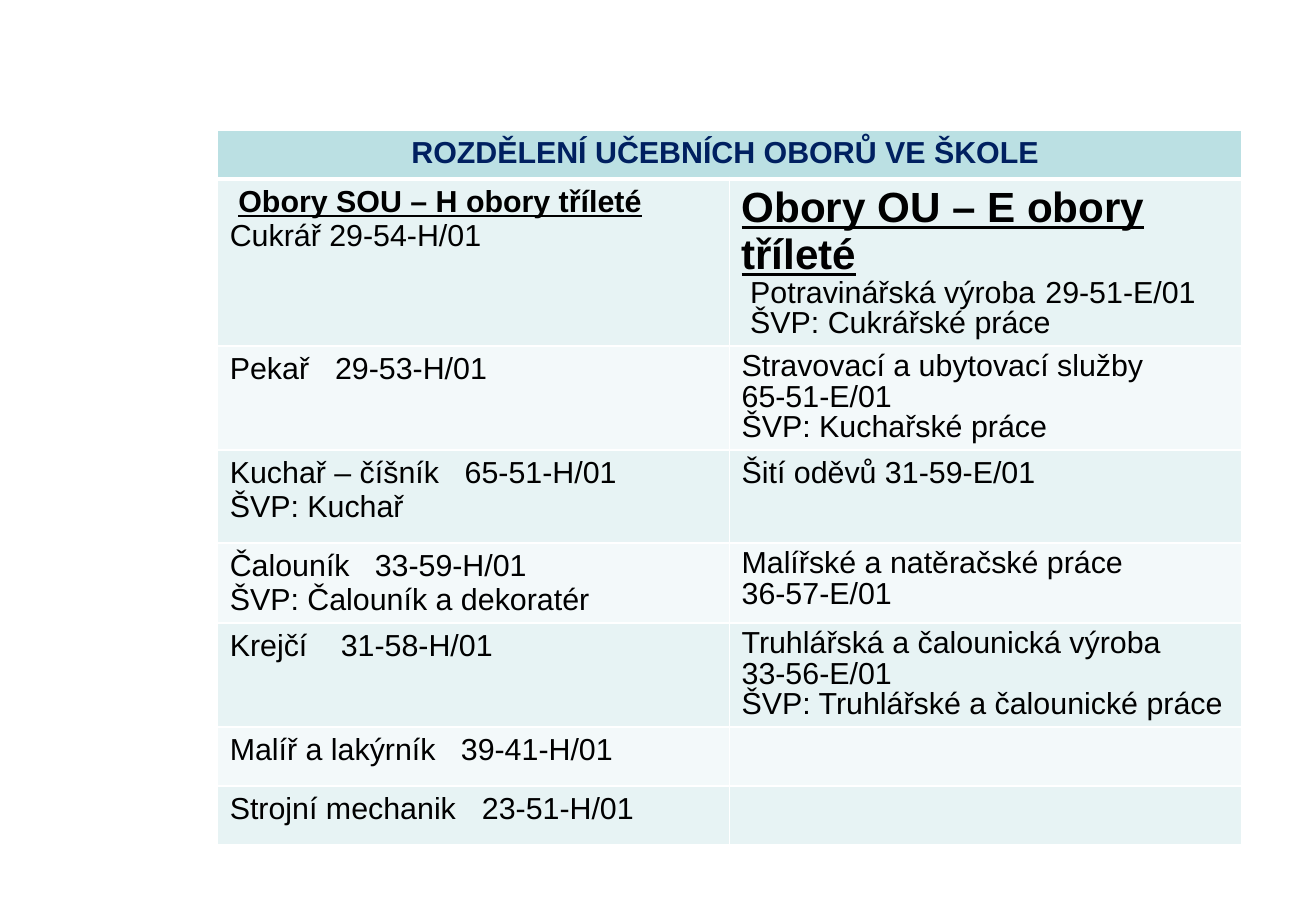
from pptx import Presentation
from pptx.dml.color import RGBColor
from pptx.enum.text import PP_ALIGN
from pptx.oxml import parse_xml
from pptx.oxml.ns import nsdecls
from pptx.util import Cm, Pt

CENTER = PP_ALIGN.CENTER
LEFT = PP_ALIGN.LEFT
BLACK = RGBColor(0x00, 0x00, 0x00)
NAVY = RGBColor(0x00, 0x20, 0x60)
TEAL = RGBColor(0xBB, 0xE0, 0xE3)
PALE = RGBColor(0xE7, 0xF3, 0xF4)
MIST = RGBColor(0xF3, 0xF9, 0xFA)
WHITE = RGBColor(0xFF, 0xFF, 0xFF)


def line(text, **style):
    return text, style


def tight(*lines):
    return [line(text, lead=0.9) for text in lines]


HEIGHTS = [1.02, 3.49, 2.17, 1.94, 1.67, 2.17, 1.23, 1.23]
ROWS = [
    ([line("ROZDĚLENÍ UČEBNÍCH OBORŮ VE ŠKOLE ", bold=True, color=NAVY, align=CENTER)], []),
    ([line("Obory SOU – H obory tříleté", bold=True, under=True, indent=0.18),
      line("Cukrář 29-54-H/01")],
     [line("Obory OU – E obory tříleté", size=25, bold=True, under=True),
      line("Potravinářská výroba\t29-51-E/01", lead=0.9, indent=0.18, tab=6.67),
      line("ŠVP: Cukrářské práce", lead=0.9, indent=0.18)]),
    ([line("Pekař\t29-53-H/01", tab=2.2)],
     tight("Stravovací a ubytovací služby", "65-51-E/01", "ŠVP: Kuchařské práce")),
    ([line("Kuchař – číšník\t65-51-H/01", tab=4.91), line("ŠVP: Kuchař")],
     [line("Šití oděvů 31-59-E/01")]),
    ([line("Čalouník\t33-59-H/01", tab=3.03), line("ŠVP: Čalouník a dekoratér")],
     tight("Malířské a natěračské práce", "36-57-E/01")),
    ([line("Krejčí\t31-58-H/01", tab=2.32)],
     tight("Truhlářská a čalounická výroba", "33-56-E/01",
           "ŠVP: Truhlářské a čalounické práce")),
    ([line("Malíř a lakýrník\t39-41-H/01", tab=4.83)], []),
    ([line("Strojní mechanik\t23-51-H/01", tab=5.27)], []),
]


class Deck:
    font = "Arial"
    size = 18

    def __init__(self, wide, high):
        self.file = Presentation()
        self.file.slide_width = Cm(wide)
        self.file.slide_height = Cm(high)
        self.slide = self.file.slides.add_slide(self.file.slide_layouts[6])

    def text(self, para, text, size=None, bold=False, under=False, color=BLACK,
             align=LEFT, lead=None, indent=0, tab=None):
        para.alignment = align
        if lead:
            para.line_spacing = lead
        props = para._p.get_or_add_pPr()
        if indent:
            props.set("marL", "0")
            props.set("indent", str(Cm(indent)))
        if tab:
            props.append(parse_xml(
                f'<a:tabLst {nsdecls("a")}><a:tab pos="{Cm(tab)}" algn="l"/></a:tabLst>'))
        run = para.add_run()
        run.text = text
        run.font.name = self.font
        run.font.size = Pt(size or self.size)
        run.font.bold = bold
        run.font.underline = under
        run.font.color.rgb = color

    def edge(self, cell, **widths):
        props = cell._tc.get_or_add_tcPr()
        for spot, (side, width) in enumerate(widths.items()):
            props.insert(spot, parse_xml(
                f'<a:ln{side} {nsdecls("a")} w="{Pt(width)}"><a:solidFill>'
                f'<a:srgbClr val="{WHITE}"/></a:solidFill></a:ln{side}>'))

    def table(self, rows, heights, left, top, width):
        count = len(rows[0])
        grid = self.slide.shapes.add_table(
            len(rows), count, Cm(left), Cm(top), Cm(width), Cm(sum(heights))).table
        grid.first_row = False
        grid.horz_banding = False
        for col in grid.columns:
            col.width = Cm(width / count)
        for row, (cells, height) in enumerate(zip(rows, heights)):
            grid.rows[row].height = Cm(height)
            fill = TEAL if row == 0 else PALE if row % 2 else MIST
            for col, lines in enumerate(cells):
                cell = grid.cell(row, col)
                cell.fill.solid()
                cell.fill.fore_color.rgb = fill
                self.edge(cell, L=1, R=1, T=3 if row == 1 else 1, B=3 if row == 0 else 1)
                frame = cell.text_frame
                for spot, (text, style) in enumerate(lines):
                    para = frame.add_paragraph() if spot else frame.paragraphs[0]
                    self.text(para, text, **style)
        grid.cell(0, 0).merge(grid.cell(0, count - 1))


def main():
    deck = Deck(27.51, 19.05)
    deck.table(ROWS, HEIGHTS, left=4.55, top=2.72, width=21.4)
    deck.file.save("out.pptx")


if __name__ == "__main__":
    main()
